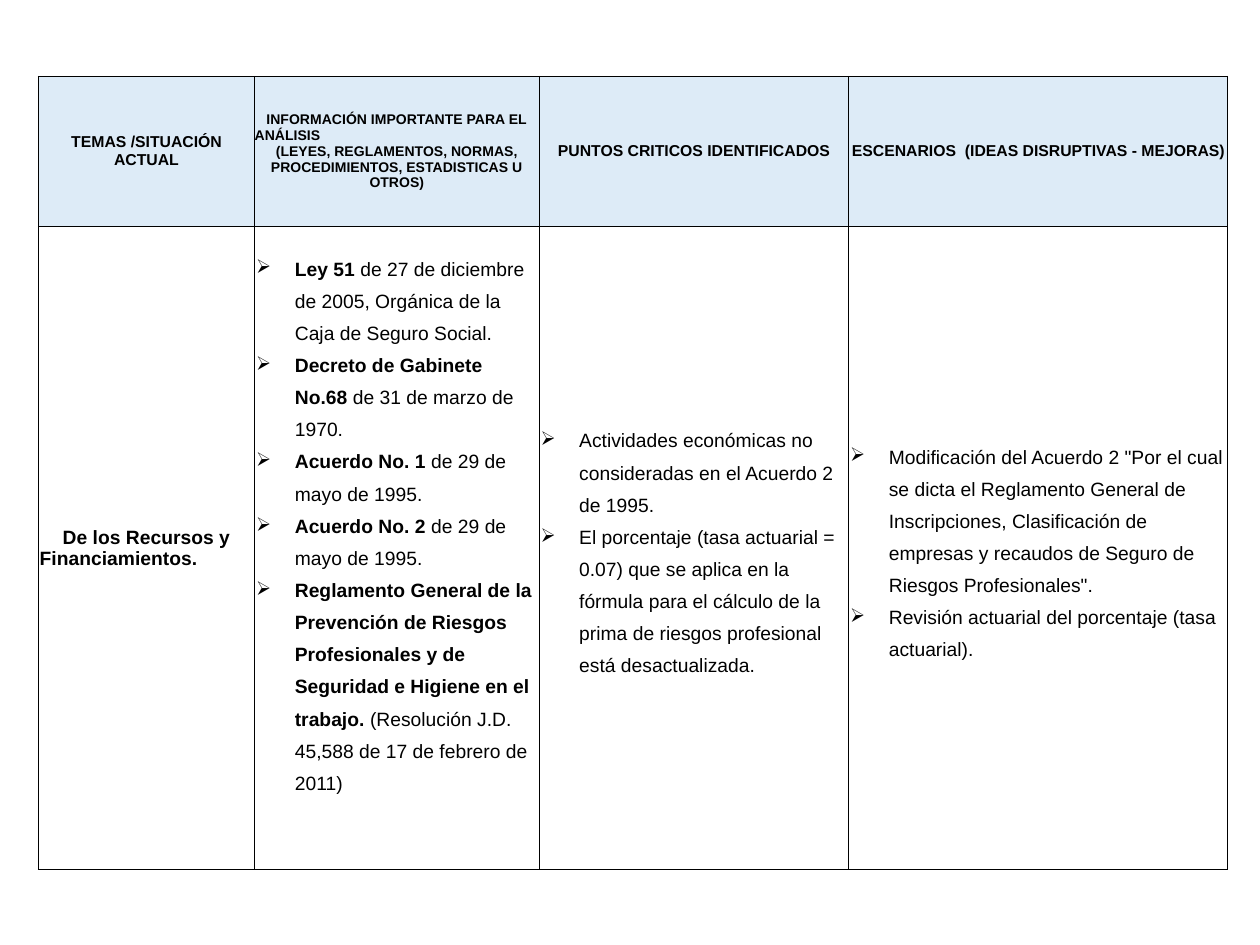
import pptx
import pptx.dml.color
import pptx.enum.text
import pptx.oxml
import pptx.oxml.ns
import pptx.util
from pptx.util import Cm, Pt

BLACK = pptx.dml.color.RGBColor(0x00, 0x00, 0x00)
PALE_BLUE = pptx.dml.color.RGBColor(0xDD, 0xEB, 0xF7)
ALIGN = pptx.enum.text.PP_ALIGN
FONT = "Arial"
INDENT = Cm(0.78)
COLUMN_WIDTHS = [4.37, 5.74, 6.25, 7.65]
ROW_HEIGHTS = [3.02, 12.95]

# Each header: size, then lines with their alignment.
HEADERS = [
    (9, [("TEMAS /SITUACIÓN ACTUAL", ALIGN.CENTER)]),
    (8, [("INFORMACIÓN IMPORTANTE PARA EL", ALIGN.CENTER),
         ("ANÁLISIS", ALIGN.LEFT),
         ("(LEYES, REGLAMENTOS, NORMAS, PROCEDIMIENTOS, ESTADISTICAS U OTROS)",
          ALIGN.CENTER)]),
    (9, [("PUNTOS CRITICOS IDENTIFICADOS", ALIGN.CENTER)]),
    (9, [("ESCENARIOS  (IDEAS DISRUPTIVAS - MEJORAS)", ALIGN.CENTER)]),
]
TOPIC = [("De los Recursos y", ALIGN.CENTER), ("Financiamientos.", ALIGN.LEFT)]

# Each bullet: bold part, regular part.
BULLETS = [
    [("Ley 51 ", "de 27 de diciembre de 2005, Orgánica de la Caja de Seguro Social."),
     ("Decreto de Gabinete No.68", " de 31 de marzo de 1970."),
     ("Acuerdo No. 1 ", "de 29 de mayo de 1995."),
     ("Acuerdo No. 2", " de 29 de mayo de 1995."),
     ("Reglamento General de la Prevención de Riesgos Profesionales y de "
      "Seguridad e Higiene en el trabajo. ",
      "(Resolución J.D. 45,588 de 17 de febrero de 2011)")],
    [("", "Actividades económicas no consideradas en el Acuerdo 2 de 1995."),
     ("", "El porcentaje (tasa actuarial = 0.07) que se aplica en la fórmula para "
          "el cálculo de la prima de riesgos profesional está desactualizada.")],
    [("", 'Modificación del Acuerdo 2 "Por el cual se dicta el Reglamento General '
          "de Inscripciones, Clasificación de empresas y recaudos de Seguro de "
          'Riesgos Profesionales".'),
     ("", "Revisión actuarial del porcentaje (tasa actuarial).")],
]


def add_run(p, text, size, bold):
    r = p.add_run()
    r.text = text
    r.font.name = FONT
    r.font.size = Pt(size)
    r.font.bold = bold
    r.font.color.rgb = BLACK


def paragraphs(tf, count):
    """Return count paragraphs, reusing the one already in the frame."""
    return [tf.paragraphs[0]] + [tf.add_paragraph() for _ in range(count - 1)]


def fill_lines(cell, size, lines):
    for p, (text, align) in zip(paragraphs(cell.text_frame, len(lines)), lines):
        p.alignment = align
        add_run(p, text, size, True)


def fill_bullets(cell, items):
    for p, (strong, plain) in zip(paragraphs(cell.text_frame, len(items)), items):
        p.line_spacing = 1.5
        pPr = p._p.get_or_add_pPr()
        pPr.set("marL", str(INDENT))
        pPr.set("indent", str(-INDENT))
        pPr.append(pptx.oxml.parse_xml(
            f'<a:buChar {pptx.oxml.ns.nsdecls("a")} char="➢"/>'))
        if strong:
            add_run(p, strong, 11, True)
        add_run(p, plain, 11, False)


def format_cell(cell, margin, fill=None):
    cell.vertical_anchor = pptx.enum.text.MSO_ANCHOR.MIDDLE
    cell.margin_left = cell.margin_right = cell.margin_top = margin
    cell.margin_bottom = 0
    tcPr = cell._tc.get_or_add_tcPr()
    for side in ("lnL", "lnR", "lnT", "lnB"):
        tcPr.append(pptx.oxml.parse_xml(
            f'<a:{side} {pptx.oxml.ns.nsdecls("a")} w="{Pt(0.5)}"><a:solidFill>'
            f'<a:srgbClr val="{BLACK}"/></a:solidFill></a:{side}>'))
    if fill is None:
        cell.fill.background()
    else:
        cell.fill.solid()
        cell.fill.fore_color.rgb = fill


def add_analysis_table(s, left, top, width, height):
    table = s.shapes.add_table(2, 4, left, top, width, height).table
    table.first_row = table.horz_banding = False
    for column, share in zip(table.columns, COLUMN_WIDTHS):
        column.width = int(width * share / sum(COLUMN_WIDTHS))
    for row, share in zip(table.rows, ROW_HEIGHTS):
        row.height = int(height * share / sum(ROW_HEIGHTS))

    for col, (size, lines) in enumerate(HEADERS):
        format_cell(table.cell(0, col), 0, PALE_BLUE)
        format_cell(table.cell(1, col), Cm(0.03))
        fill_lines(table.cell(0, col), size, lines)

    fill_lines(table.cell(1, 0), 11, TOPIC)
    for col, items in enumerate(BULLETS, start=1):
        fill_bullets(table.cell(1, col), items)
    table.cell(1, 1).margin_bottom = Cm(1.1)


def main():
    prs = pptx.Presentation()
    prs.slide_width, prs.slide_height = Cm(25.4), Cm(19.05)
    s = prs.slides.add_slide(prs.slide_layouts[6])
    add_analysis_table(s, Cm(0.77), Cm(1.54), Cm(23.98), Cm(15.98))
    prs.save("out.pptx")


if __name__ == "__main__":
    main()
